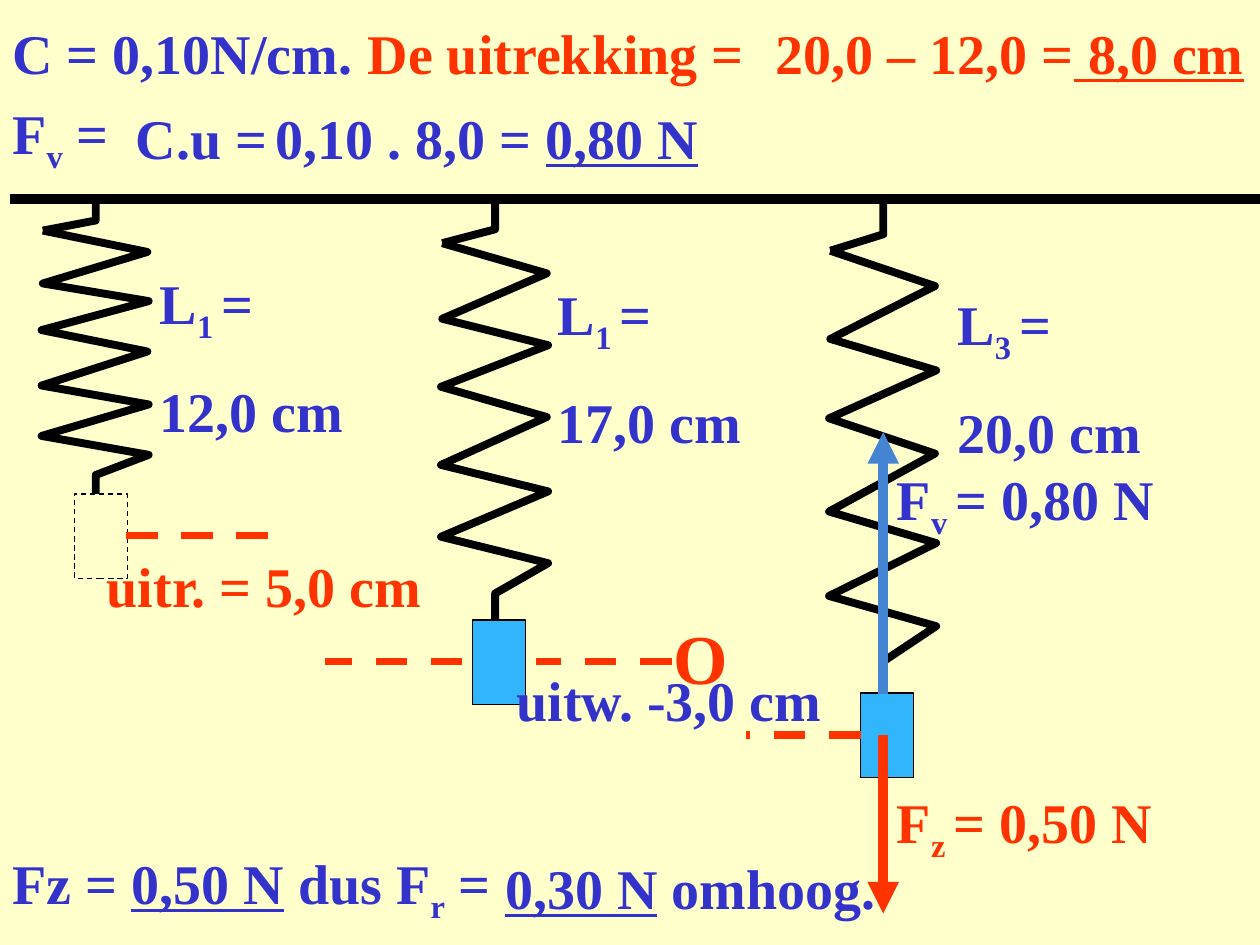
from lxml.etree import SubElement
from pptx import Presentation
from pptx.dml.color import RGBColor
from pptx.enum.dml import MSO_LINE
from pptx.enum.shapes import MSO_CONNECTOR, MSO_SHAPE
from pptx.enum.text import MSO_ANCHOR
from pptx.oxml.ns import qn
from pptx.util import Pt

PX = 9144  # 100 px to the inch
COLORS = {
    "cream": "FFFFCC", "black": "000000", "red": "FF3300",
    "ink": "3333CC", "weight": "31B6FD", "arrow": "4584D3",
}
RGB = {name: RGBColor.from_string(value) for name, value in COLORS.items()}

deck = Presentation()
deck.slide_width, deck.slide_height = 1000 * PX, 750 * PX
page = deck.slides.add_slide(deck.slide_layouts[6])
page.background.fill.solid()
page.background.fill.fore_color.rgb = RGB["cream"]
shapes = page.shapes


def add_line(start, end, color, width, dashed=False, arrow=False):
    line = shapes.add_connector(
        MSO_CONNECTOR.STRAIGHT, *(value * PX for value in (*start, *end)))
    line.line.color.rgb = RGB[color]
    line.line.width = Pt(width)
    if dashed:
        line.line.dash_style = MSO_LINE.DASH
    if arrow:
        SubElement(line.line._get_or_add_ln(), qn("a:tailEnd"), type="triangle")
    SubElement(line._element.spPr, qn("a:effectLst"))


def add_text(frame, color, *paragraphs, size=32, anchor=MSO_ANCHOR.MIDDLE):
    """Each paragraph is a list of (text, style); style is "", "sub" or "under"."""
    box = shapes.add_textbox(*(value * PX for value in frame))
    box.text_frame.word_wrap = True
    box.text_frame.vertical_anchor = anchor
    for index, spans in enumerate(paragraphs):
        if index == 0:
            paragraph = box.text_frame.paragraphs[0]
        else:
            paragraph = box.text_frame.add_paragraph()
            paragraph.space_before = Pt(18)
        font = paragraph.font
        font.name, font.size, font.bold = "Times New Roman", Pt(size), True
        font.color.rgb = RGB[color]
        for text, style in spans:
            span = paragraph.add_run()
            span.text = text
            # Runs repeat the paragraph font so that every viewer shows it
            span.font.name, span.font.size, span.font.bold = font.name, font.size, True
            span.font.color.rgb = RGB[color]
            if style == "under":
                span.font.underline = True
            elif style == "sub":
                span._r.get_or_add_rPr().set("baseline", "-25000")


# Springs: one coil, stretched between its top and bottom, with a hook above
CEILING = 158
COIL = [(1, 0), (84, 0.08), (1, 0.2), (85, 0.27), (0, 0.38), (84, 0.46),
        (0, 0.59), (85, 0.66), (0, 0.78), (85, 0.85), (43, 0.93), (43, 1)]
HOOK = [(1, 1), (43, 0.68), (43, 0)]
for left, top, bottom in [(33, 183, 392), (350, 193, 492), (658, 199, 550)]:
    for outline, start, end in [(COIL, top, bottom), (HOOK, CEILING, top)]:
        points = [(left + x, round(start + y * (end - start))) for x, y in outline]
        builder = shapes.build_freeform(*points[0], scale=PX)
        builder.add_line_segments(points[1:], close=False)
        wire = builder.convert_to_shape()
        wire.shadow.inherit = False
        wire.fill.background()
        wire.line.color.rgb = RGB["black"]
        wire.line.width = Pt(4.5)

add_line((8, CEILING), (1000, CEILING), "black", 6)

# Weights: the first is only an empty dashed outline
for left, top, filled in [(59, 392, False), (375, 492, True), (683, 550, True)]:
    weight = shapes.add_shape(
        MSO_SHAPE.RECTANGLE, left * PX, top * PX, 42 * PX, 67 * PX)
    weight.shadow.inherit = False
    weight.line.color.rgb = RGB["black"]
    weight.line.width = Pt(0.75)
    if filled:
        weight.fill.solid()
        weight.fill.fore_color.rgb = RGB["weight"]
    else:
        weight.fill.background()
        weight.line.dash_style = MSO_LINE.DASH

# Level marks
for start, end, level in [(100, 225, 425), (533, 425, 525), (367, 258, 525), (683, 592, 583)]:
    add_line((start, level), (end, level), "red", 4.5, dashed=True)

# Lengths and displacements
for left, top, number, length in [
        (117, 208, "1 ", "12,0 cm"), (433, 217, "1 ", "17,0 cm"), (750, 225, "3 ", "20,0 cm")]:
    add_text((left, top, 225, 143), "ink", [("L", ""), (number, "sub"), ("=", "")],
             [(length, "")], anchor=MSO_ANCHOR.TOP)
add_text((75, 433, 300, 63), "red", [("uitr. = 5,0 cm", "")], anchor=MSO_ANCHOR.TOP)
add_text((525, 483, 108, 77), "red", [("O", "")], size=40, anchor=MSO_ANCHOR.TOP)
add_text((400, 523, 342, 63), "ink", [("uitw. -3,0 cm", "")], anchor=MSO_ANCHOR.TOP)

# Calculations above and below the drawing
for frame, color, spans in [
        ((0, 0, 358, 83), "ink", [("C = 0,10N/cm.", "")]),
        ((282, -5, 336, 92), "red", [("De uitrekking =", "")]),
        ((606, -5, 394, 92), "red", [("20,0 – 12,0 =", ""), (" 8,0 cm", "under")]),
        ((0, 67, 142, 83), "ink", [("F", ""), ("v", "sub"), (" =", "")]),
        ((98, 67, 158, 83), "ink", [("C.u =", "")]),
        ((209, 67, 467, 83), "ink", [("0,10 . 8,0 = ", ""), ("0,80 N", "under")]),
        ((0, 658, 500, 92), "ink", [("Fz = ", ""), ("0,50 N", "under"), (" dus F", ""),
                                    ("r", "sub"), (" =", "")]),
        ((391, 658, 408, 92), "ink", [("0,30 N", "under"), (" omhoog.", "")])]:
    add_text(frame, color, spans)

# Forces on the third weight
for start, end, line_color, label_top, text_color, name, force in [
        (583, 725, "red", 620, "red", "z ", "= 0,50 N"),
        (551, 343, "arrow", 364, "ink", "v ", "= 0,80 N")]:
    add_line((701, start), (701, end), line_color, 6, arrow=True)
    add_text((702, label_top, 248, 63), text_color,
             [("F", ""), (name, "sub"), (force, "")], anchor=MSO_ANCHOR.TOP)

deck.save("out.pptx")
